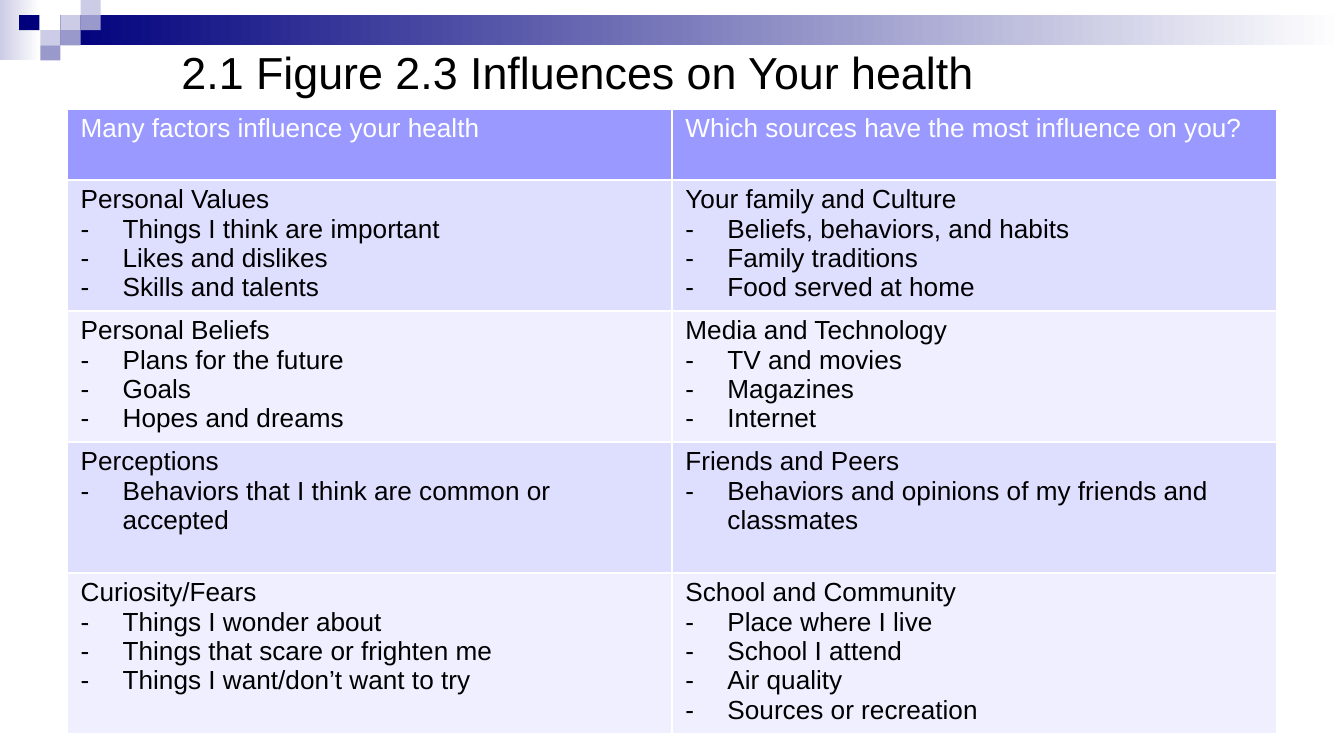
from lxml import etree
from pptx import Presentation, util as u
from pptx.dml.color import RGBColor
from pptx.enum import shapes, text
from pptx.oxml import ns

WIDTH = 10
HEIGHT = WIDTH * 9 / 16
COL, ROW = 0.15, HEIGHT / 50
INDENT = u.Pt(22.5)
NAVY, LAVENDER, VIOLET, WHITE, BLACK = "00007D", "CCCCE6", "9999CC", "FFFFFF", "000000"
HEADER, BANDS = "9999FF", ("DEDEFF", "EFEFFF")
ROW_POINTS = (38, 70.2, 70.2, 70.2, 86.4)

SQUARES = [
    (3, 1, LAVENDER), (4, 0, LAVENDER), (4, 1, VIOLET), (2, 2, LAVENDER),
    (0.95, 1, NAVY), (3, 2, VIOLET), (2, 3, VIOLET),
]
FACTORS = [
    (["Many factors influence your health"],
     ["Which sources have the most influence on you?"]),
    (["Personal Values", "Things I think are important", "Likes and dislikes",
      "Skills and talents"],
     ["Your family and Culture", "Beliefs, behaviors, and habits",
      "Family traditions", "Food served at home"]),
    (["Personal Beliefs", "Plans for the future", "Goals", "Hopes and dreams"],
     ["Media and Technology", "TV and movies", "Magazines", "Internet"]),
    (["Perceptions", "Behaviors that I think are common or accepted"],
     ["Friends and Peers", "Behaviors and opinions of my friends and classmates"]),
    (["Curiosity/Fears", "Things I wonder about", "Things that scare or frighten me",
      "Things I want/don’t want to try"],
     ["School and Community", "Place where I live", "School I attend",
      "Air quality", "Sources or recreation"]),
]


def color(value):
    return RGBColor.from_string(value)


def apply(target, values):
    for name, value in values.items():
        setattr(target, name, value)


def write(p, words, size, ink):
    r = p.add_run()
    r.text = words
    apply(r.font, {"name": "Arial", "size": u.Pt(size), "bold": False})
    r.font.color.rgb = color(ink)


def add_block(s, left, top, width, height, *colors):
    sp = s.shapes.add_shape(shapes.MSO_SHAPE.RECTANGLE,
                            *map(u.Inches, (left, top, width, height)))
    sp.shadow.inherit = False
    sp.line.fill.background()
    if len(colors) == 1:
        sp.fill.solid()
        sp.fill.fore_color.rgb = color(colors[0])
    else:
        sp.fill.gradient()
        sp.fill.gradient_angle = 0
        for stop, value in zip(sp.fill.gradient_stops, colors):
            stop.color.rgb = color(value)


def add_banner(s):
    add_block(s, 0, 0, 2 * COL, 4 * ROW, LAVENDER, WHITE)
    add_block(s, 3 * COL, ROW, WIDTH - 3 * COL, 2 * ROW, NAVY, WHITE)
    for col, row, fill in SQUARES:
        add_block(s, col * COL, row * ROW, COL, ROW, fill)


def add_title(s, words):
    sp = s.shapes.title
    sp.element.getparent().append(sp.element)
    apply(sp, {"left": u.Inches(1.25), "top": u.Inches(0.19),
               "width": u.Inches(8.17), "height": u.Inches(0.69)})
    tf = sp.text_frame
    apply(tf, {"auto_size": text.MSO_AUTO_SIZE.NONE, "word_wrap": True,
               "vertical_anchor": text.MSO_ANCHOR.MIDDLE})
    p = tf.paragraphs[0]
    p.alignment = text.PP_ALIGN.LEFT
    write(p, words, 24, BLACK)


def add_dash(p):
    props = p._p.get_or_add_pPr()
    props.set("marL", str(INDENT))
    props.set("indent", str(-INDENT))
    etree.SubElement(props, ns.qn("a:buFont"), typeface="Arial")
    etree.SubElement(props, ns.qn("a:buChar"), char="-")


def add_borders(cell):
    props = cell._tc.get_or_add_tcPr()
    for i, side in enumerate("LRTB"):
        line = etree.Element(ns.qn("a:ln" + side), w=str(u.Pt(1)))
        fill = etree.SubElement(line, ns.qn("a:solidFill"))
        etree.SubElement(fill, ns.qn("a:srgbClr"), val=WHITE)
        props.insert(i, line)


def fill_cell(cell, lines, fill, ink):
    cell.fill.solid()
    cell.fill.fore_color.rgb = color(fill)
    apply(cell, {"margin_left": u.Inches(0.1), "margin_right": u.Inches(0.1),
                 "margin_top": u.Inches(0.04), "margin_bottom": u.Inches(0.04)})
    add_borders(cell)
    tf = cell.text_frame
    for i, words in enumerate(lines):
        p = tf.add_paragraph() if i else tf.paragraphs[0]
        if i:
            add_dash(p)
        write(p, words, 14, ink)


def add_factors(s):
    frame = s.shapes.add_table(len(FACTORS), 2, u.Inches(0.05 * WIDTH), u.Inches(0.81),
                               u.Inches(0.9 * WIDTH), u.Pt(sum(ROW_POINTS)))
    table = frame.table
    table.horz_banding = False
    for i, (height, entries) in enumerate(zip(ROW_POINTS, FACTORS)):
        table.rows[i].height = u.Pt(height)
        style = (BANDS[(i - 1) % 2], BLACK) if i else (HEADER, WHITE)
        for j, lines in enumerate(entries):
            fill_cell(table.cell(i, j), lines, *style)


def main():
    prs = Presentation()
    apply(prs, {"slide_width": u.Inches(WIDTH), "slide_height": u.Inches(HEIGHT)})
    s = prs.slides.add_slide(prs.slide_layouts[5])
    add_banner(s)
    add_title(s, "2.1 Figure 2.3 Influences on Your health")
    add_factors(s)
    prs.save("out.pptx")


if __name__ == "__main__":
    main()
